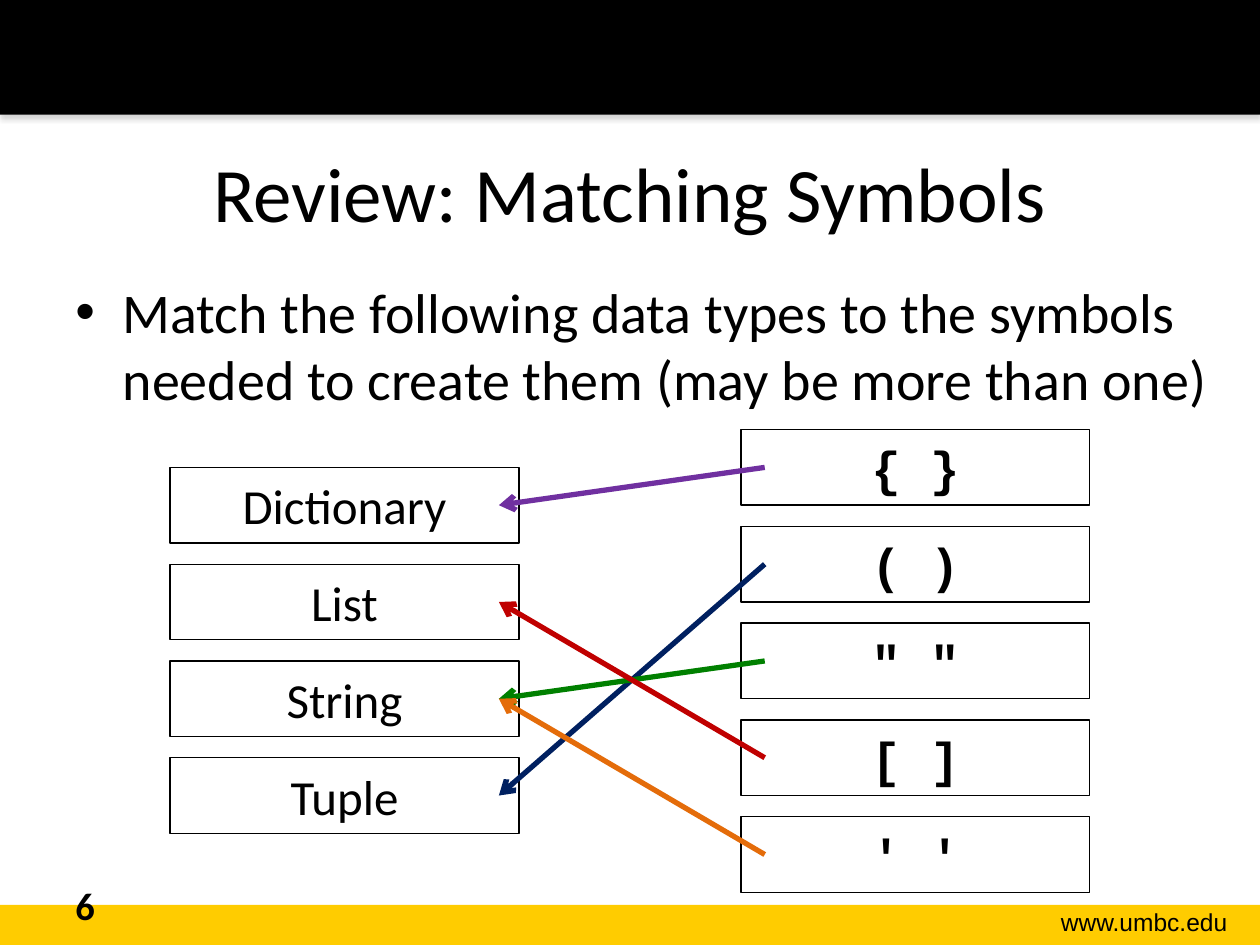
from dataclasses import dataclass

from lxml.etree import SubElement
from pptx import Presentation
from pptx.dml.color import RGBColor
from pptx.enum.shapes import MSO_CONNECTOR, MSO_SHAPE
from pptx.enum.text import MSO_ANCHOR, PP_ALIGN
from pptx.oxml.ns import qn
from pptx.util import Pt

BOX_W, BOX_H, PITCH = 199.4, 43.2, 55.3
ARROW_LEFT, ARROW_RIGHT = 285.1, 437


@dataclass
class Column:
    left: float
    top: float
    labels: list[str]
    font: str
    bold: bool

    def box_top(self, row: int) -> float:
        return self.top + row * PITCH

    def middle(self, label: str) -> float:
        return self.box_top(self.labels.index(label)) + BOX_H / 2


@dataclass
class Match:
    data_type: str
    symbol: str
    color: str


TYPES = Column(97.2, 267.1, ["Dictionary", "List", "String", "Tuple"], "Calibri", False)
SYMBOLS = Column(423.4, 245.5, ["{ }", "( )", '" "', "[ ]", "' '"], "Courier New", True)
MATCHES = [
    Match("Dictionary", "{ }", "7030A0"),
    Match("Tuple", "( )", "002060"),
    Match("String", '" "', "008000"),
    Match("List", "[ ]", "C00000"),
    Match("String", "' '", "E46C0A"),
]


def rgb(value: str) -> RGBColor:
    return RGBColor.from_string(value)


def set_text(sp, text: str, size: float, font: str = "Calibri",
             bold: bool = False, align=PP_ALIGN.LEFT, anchor=MSO_ANCHOR.TOP):
    tf = sp.text_frame
    tf.word_wrap = True
    tf.vertical_anchor = anchor
    tf.text = text
    p = tf.paragraphs[0]
    p.alignment = align
    r = p.runs[0]
    r.font.size = Pt(size)
    r.font.name = font
    r.font.bold = bold
    r.font.color.rgb = rgb("000000")
    return p


def add_rect(slide, left: float, top: float, width: float, height: float,
             fill: str, outlined: bool = False):
    sp = slide.shapes.add_shape(
        MSO_SHAPE.RECTANGLE, Pt(left), Pt(top), Pt(width), Pt(height))
    sp.shadow.inherit = False
    sp.fill.solid()
    sp.fill.fore_color.rgb = rgb(fill)
    if outlined:
        sp.line.color.rgb = rgb("000000")
        sp.line.width = Pt(0.75)
    else:
        sp.line.fill.background()
    return sp


def add_textbox(slide, left: float, top: float, width: float, height: float):
    return slide.shapes.add_textbox(Pt(left), Pt(top), Pt(width), Pt(height))


def add_shadow(sp) -> None:
    effects = sp._element.spPr.find(qn("a:effectLst"))
    shadow = SubElement(effects, qn("a:outerShdw"), blurRad=str(Pt(3.1)),
                        dist=str(Pt(1.8)), dir="5400000", rotWithShape="0")
    color = SubElement(shadow, qn("a:srgbClr"), val="808080")
    SubElement(color, qn("a:alpha"), val="35000")


def add_bullet(p, indent: float) -> None:
    pPr = p._p.get_or_add_pPr()
    pPr.set("marL", str(Pt(indent)))
    pPr.set("indent", str(Pt(-indent)))
    SubElement(pPr, qn("a:buFont"), typeface="Arial")
    SubElement(pPr, qn("a:buChar"), char="•")


def add_column(slide, column: Column) -> None:
    for row, label in enumerate(column.labels):
        sp = add_rect(slide, column.left, column.box_top(row),
                      BOX_W, BOX_H, "FFFFFF", outlined=True)
        set_text(sp, label, 28, column.font, column.bold,
                 PP_ALIGN.CENTER, MSO_ANCHOR.MIDDLE)


def add_match(slide, match: Match) -> None:
    line = slide.shapes.add_connector(
        MSO_CONNECTOR.STRAIGHT,
        Pt(ARROW_LEFT), Pt(TYPES.middle(match.data_type)),
        Pt(ARROW_RIGHT), Pt(SYMBOLS.middle(match.symbol)))
    line.line.color.rgb = rgb(match.color)
    line.line.width = Pt(3)
    SubElement(line.line._get_or_add_ln(), qn("a:headEnd"), type="arrow")
    SubElement(line._element.spPr, qn("a:effectLst"))


def main() -> None:
    prs = Presentation()
    prs.slide_width, prs.slide_height = Pt(720), Pt(540)
    slide = prs.slides.add_slide(prs.slide_layouts[5])

    add_rect(slide, 0, 517, 720, 23, "FFCC00")
    add_shadow(add_rect(slide, 0, 0, 720, 65.5, "000000"))
    set_text(add_textbox(slide, 565.2, 514.8, 143.3, 24.5),
             "www.umbc.edu", 14, "Arial", align=PP_ALIGN.RIGHT)

    title = slide.shapes.title
    title.left, title.top, title.width, title.height = Pt(36), Pt(64.8), Pt(648), Pt(90)
    set_text(title, "Review: Matching Symbols", 44,
             align=PP_ALIGN.CENTER, anchor=MSO_ANCHOR.MIDDLE)

    p = set_text(add_textbox(slide, 36, 154.8, 668.9, 327.6),
                 "Match the following data types to the symbols "
                 "needed to create them (may be more than one)", 32)
    add_bullet(p, 27)
    set_text(add_textbox(slide, 36, 500.4, 167.8, 28.8), "6", 22, bold=True)

    for column in (TYPES, SYMBOLS):
        add_column(slide, column)
    for match in MATCHES:
        add_match(slide, match)

    prs.save("out.pptx")


if __name__ == "__main__":
    main()
